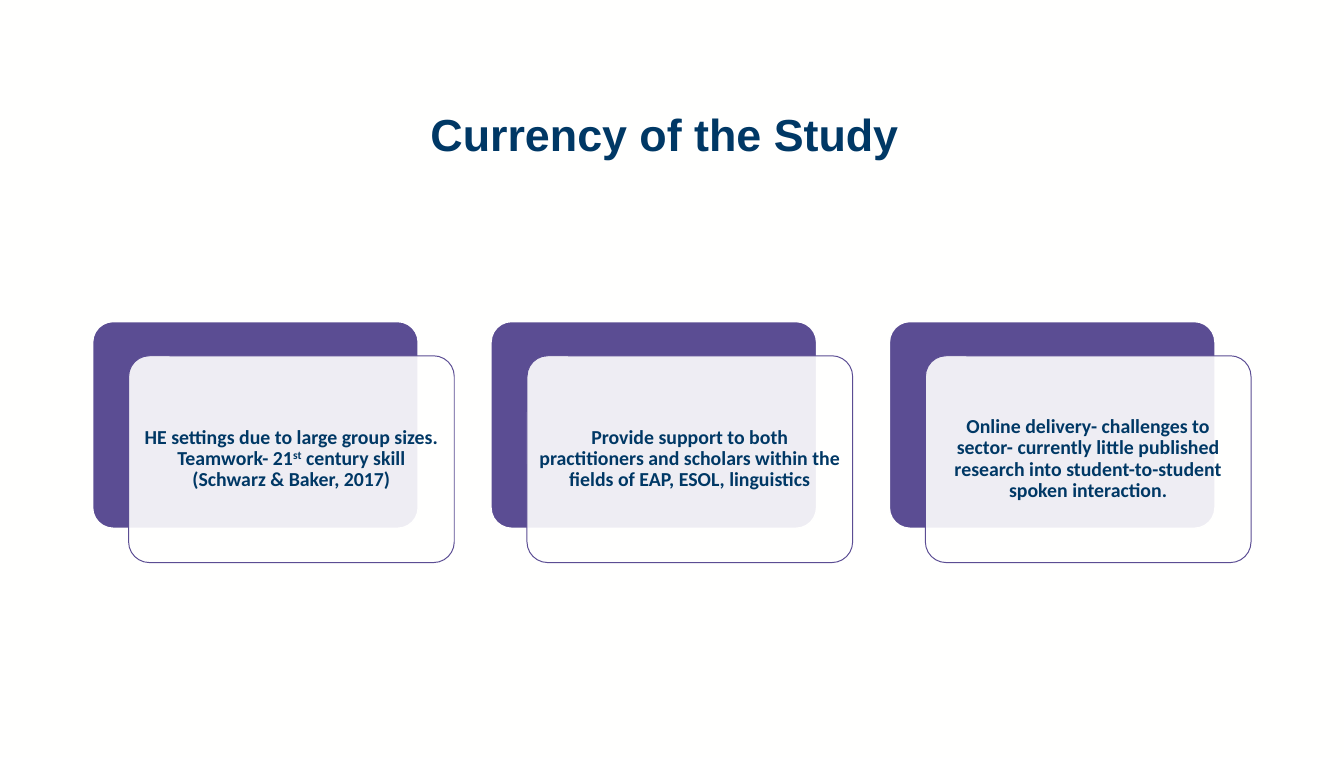
import pptx
import pptx.util
import pptx.dml.color
import pptx.enum.shapes
import pptx.enum.text
import pptx.oxml.ns
import pptx.oxml.xmlchemy

Pt = pptx.util.Pt
NAVY, PURPLE, WHITE = "003865", "5B4D93", "FFFFFE"
LEFT, TOP, STEP = 93.6, 324.7, 402.5
WIDTH, HEIGHT = 329, 208.8

# Each card is a list of (text, superscript) runs
CARDS = [
    [("HE settings due to large group sizes. Teamwork- 21", False),
     ("st", True),
     (" century skill (Schwarz & Baker, 2017)", False)],
    [("Provide support to both practitioners and scholars within the "
      "fields of EAP, ESOL, linguistics", False)],
    [("Online delivery- challenges to sector- currently little published "
      "research into student-to-student spoken interaction.", False)],
]


def color(code):
    return pptx.dml.color.RGBColor.from_string(code)


def write(para, text, font="Calibri", size=20, tint=NAVY, bold=True,
          align="CENTER", raised=False):
    para.alignment = getattr(pptx.enum.text.PP_ALIGN, align)
    para.line_spacing = 0.9
    run = para.add_run()
    run.text = text
    run.font.name = font
    run.font.size = Pt(size)
    run.font.bold = bold
    run.font.color.rgb = color(tint)
    if raised:
        run._r.get_or_add_rPr().set("baseline", "30000")


def panel(slide, x, y, fill, line, weight, alpha=100):
    kind = pptx.enum.shapes.MSO_SHAPE.ROUNDED_RECTANGLE
    shape = slide.shapes.add_shape(kind, Pt(x), Pt(y), Pt(WIDTH), Pt(HEIGHT))
    shape.adjustments[0] = 0.1
    shape.shadow.inherit = False
    shape.fill.solid()
    shape.fill.fore_color.rgb = color(fill)
    shape.line.color.rgb = color(line)
    shape.line.width = Pt(weight)
    if alpha < 100:
        tone = shape._element.spPr.find(
            "/".join(map(pptx.oxml.ns.qn, ("a:solidFill", "a:srgbClr"))))
        part = pptx.oxml.xmlchemy.OxmlElement("a:alpha")
        part.set("val", str(alpha * 1000))
        tone.append(part)


def label(slide, x, y, runs):
    box = slide.shapes.add_textbox(Pt(x), Pt(y), Pt(316.8), Pt(196.6))
    frame = box.text_frame
    frame.word_wrap = True
    frame.vertical_anchor = pptx.enum.text.MSO_ANCHOR.MIDDLE
    frame.margin_left = frame.margin_right = Pt(6)
    frame.margin_top = frame.margin_bottom = Pt(6)
    for text, raised in runs:
        write(frame.paragraphs[0], text, raised=raised)


def card(slide, x, runs):
    panel(slide, x, TOP, PURPLE, WHITE, 1.5)
    panel(slide, x + 36.4, TOP + 34.6, WHITE, PURPLE, 1, alpha=90)
    label(slide, x + 42.4, TOP + 40.6, runs)


def heading(slide, text):
    title = slide.shapes.title
    title.left, title.top = Pt(427.7), Pt(110.2)
    title.width, title.height = Pt(650.9), Pt(112.3)
    frame = title.text_frame
    frame.word_wrap = True
    frame.auto_size = pptx.enum.text.MSO_AUTO_SIZE.NONE
    frame.vertical_anchor = pptx.enum.text.MSO_ANCHOR.TOP
    write(frame.paragraphs[0], text, font="Arial", size=45.3, align="LEFT")


def main():
    deck = pptx.Presentation()
    deck.slide_width, deck.slide_height = Pt(1357.9), Pt(765.4)
    slide = deck.slides.add_slide(deck.slide_layouts.get_by_name("Title Only"))

    # Background and title
    slide.background.fill.solid()
    slide.background.fill.fore_color.rgb = color(WHITE)
    heading(slide, "Currency of the Study")

    # Row of cards
    for i, runs in enumerate(CARDS):
        card(slide, LEFT + i * STEP, runs)

    deck.save("out.pptx")


if __name__ == "__main__":
    main()
